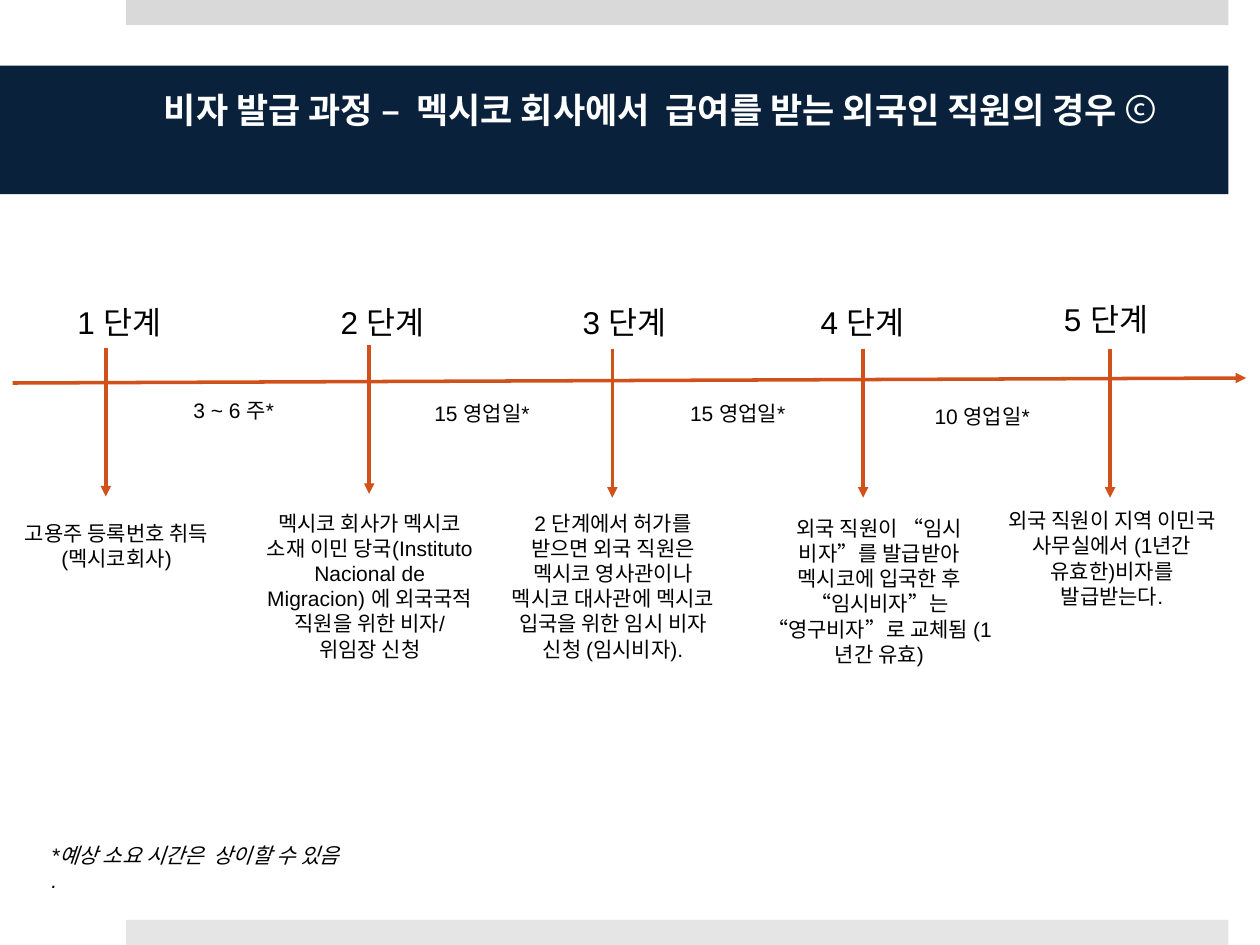
import pptx
import pptx.util
import pptx.dml.color
import pptx.enum.shapes
import pptx.enum.text
import pptx.oxml.ns
import lxml.etree

Inches = pptx.util.Inches
Align = pptx.enum.text.PP_ALIGN
ORANGE = "D0511A"

# Arrow x and top, head box (left, top), body box (left, top, width, height), text
STEPS = [
    (0.84, 2.76, (0.3, 2.36), (0, 4.08, 1.85, 0.5),
     "고용주 등록번호 취득 (멕시코회사)"),
    (2.93, 2.74, (2.39, 2.36), (2.01, 4, 1.85, 1.51),
     "멕시코 회사가 멕시코 소재 이민 당국(Instituto Nacional de Migracion) 에 "
     "외국국적 직원을 위한 비자/ 위임장 신청"),
    (4.86, 2.77, (4.31, 2.36), (3.94, 4, 1.85, 1.51),
     "2 단계에서 허가를 받으면 외국 직원은 멕시코 영사관이나 멕시코 대사관에 "
     "멕시코 입국을 위한 임시 비자 신청 (임시비자)."),
    (6.85, 2.77, (6.2, 2.36), (5.95, 4.04, 2.06, 1.31),
     "외국 직원이 “임시 비자”를 발급받아 멕시코에 입국한 후 “임시비자”는 "
     "“영구비자”로 교체됨 (1년간 유효)"),
    (8.81, 2.77, (8.13, 2.33), (7.9, 3.98, 1.85, 0.91),
     "외국 직원이 지역 이민국 사무실에서 (1년간 유효한)비자를 발급받는다."),
]
# Left and top of each waiting time
WAITS = [
    (0.93, 3.11, "3 ~ 6 주*"),
    (2.9, 3.13, "15 영업일*"),
    (4.93, 3.13, "15 영업일*"),
    (6.87, 3.15, "10 영업일*"),
]


def color(code):
    return pptx.dml.color.RGBColor.from_string(code)


def add_bar(slide, box, fill):
    bar = slide.shapes.add_shape(
        pptx.enum.shapes.MSO_SHAPE.RECTANGLE, *map(Inches, box))
    bar.shadow.inherit = False
    bar.fill.solid()
    bar.fill.fore_color.rgb = color(fill)
    bar.line.fill.background()
    return bar


def add_text(slide, box, lines, size=12, align=Align.CENTER, italic=False):
    frame = slide.shapes.add_textbox(*map(Inches, box)).text_frame
    frame.word_wrap = True
    frame.text = "\n".join(lines)
    for para in frame.paragraphs:
        para.alignment = align
        para.font.name = "Arial"
        para.font.size = pptx.util.Pt(size)
        para.font.italic = italic
        para.font.color.rgb = color("000000")


def add_arrow(slide, start, end):
    arrow = slide.shapes.add_connector(
        pptx.enum.shapes.MSO_CONNECTOR.STRAIGHT, *map(Inches, start + end))
    arrow.line.color.rgb = color(ORANGE)
    arrow.line.width = pptx.util.Pt(2)
    qn = pptx.oxml.ns.qn
    lxml.etree.SubElement(arrow.line._get_or_add_ln(), qn("a:tailEnd"),
                          type="triangle")
    lxml.etree.SubElement(arrow._element.spPr, qn("a:effectLst"))


def add_title(slide, box):
    frame = add_bar(slide, box, "09213B").text_frame
    frame.word_wrap = True
    frame.vertical_anchor = pptx.enum.text.MSO_ANCHOR.TOP
    frame.margin_left, frame.margin_right = Inches(1.3), Inches(0.2)
    frame.margin_top = Inches(0.13)
    para = frame.paragraphs[0]
    para.alignment = Align.LEFT
    para.font.name = "League Spartan"
    para.font.color.rgb = color("FFFFFF")
    for text, size, bold in [
            ("비자 발급 과정 –  멕시코 회사에서  급여를 받는 외국인 직원의 경우 ", 20, True),
            ("©", 24, False)]:
        run = para.add_run()
        run.text = text
        run.font.size = pptx.util.Pt(size)
        run.font.bold = bold


def add_step(slide, number, step):
    x, top, head, body, text = step
    add_text(slide, head + (1.08, 0.4), [f"{number} 단계"], 18, Align.RIGHT)
    add_arrow(slide, (x, top), (x, top + 1.18))
    add_text(slide, body, [text])


def add_timeline(slide):
    add_arrow(slide, (0.1, 3.04), (9.89, 3))
    for number, step in enumerate(STEPS, 1):
        add_step(slide, number, step)
    for left, top, text in WAITS:
        add_text(slide, (left, top, 1.85, 0.3), [text])


def main():
    deck = pptx.Presentation()
    deck.slide_width, deck.slide_height = Inches(10), Inches(7.5)
    slide = deck.slides.add_slide(deck.slide_layouts[6])
    add_bar(slide, (1, 0, 8.75, 0.2), "D9D9D9")
    add_bar(slide, (1, 7.3, 8.75, 0.2), "E5E5E5")
    add_title(slide, (0, 0.52, 9.75, 1.02))
    add_timeline(slide)
    add_text(slide, (0.31, 6.64, 7.61, 0.5),
             ["*예상 소요 시간은  상이할 수 있음", "."],
             align=Align.LEFT, italic=True)
    deck.save("out.pptx")


if __name__ == "__main__":
    main()
